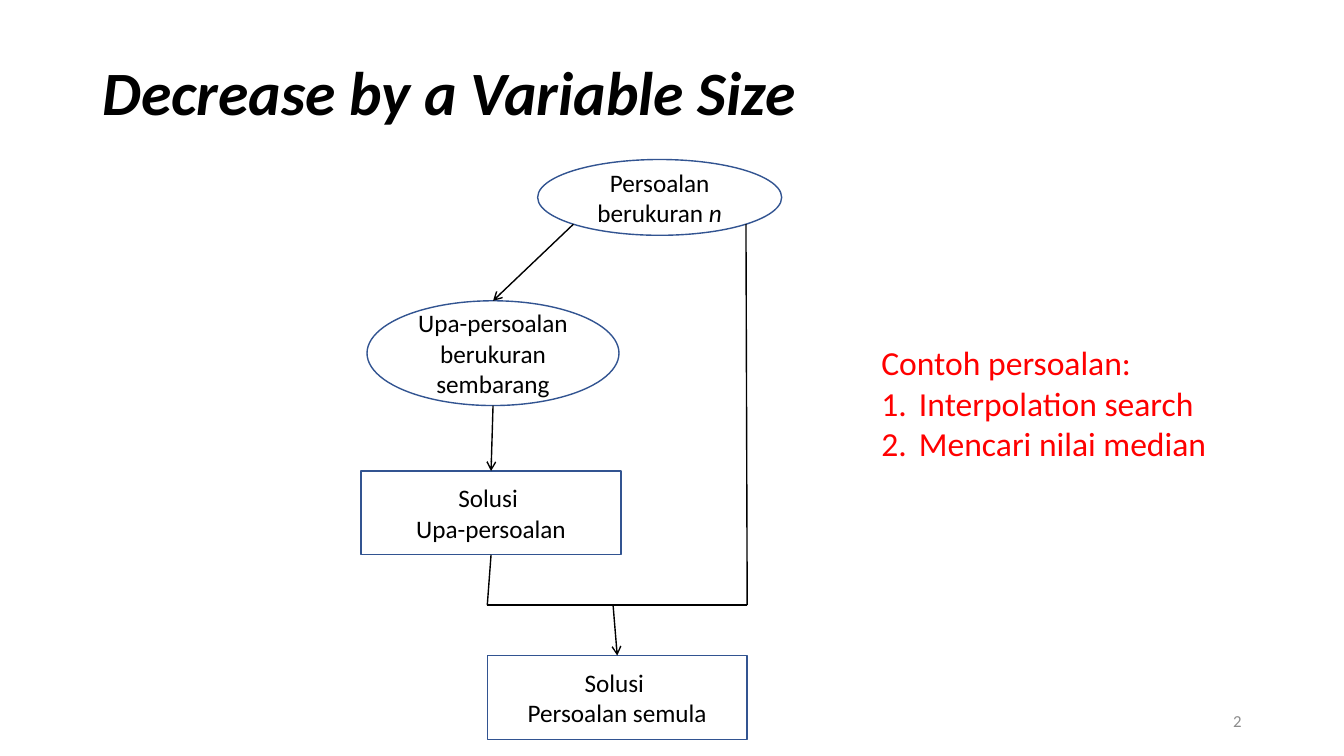
import math

import lxml.etree
import pptx
import pptx.dml.color
import pptx.enum.shapes
import pptx.enum.text
import pptx.oxml.ns
import pptx.util

Cm = pptx.util.Cm
Pt = pptx.util.Pt
RGBColor = pptx.dml.color.RGBColor
ALIGN = pptx.enum.text.PP_ALIGN
ANCHOR = pptx.enum.text.MSO_ANCHOR
SHAPE = pptx.enum.shapes.MSO_SHAPE
qn = pptx.oxml.ns.qn

BLACK = RGBColor(0x00, 0x00, 0x00)
GREY = RGBColor(0x8C, 0x8C, 0x8C)
RED = RGBColor(0xFF, 0x00, 0x00)
NAVY = RGBColor(0x32, 0x54, 0x91)

TITLE_FONT = {"name": "Calibri", "size": Pt(44), "bold": True, "italic": True}
NODE_FONT = {"name": "Calibri", "size": Pt(18)}
EXAMPLE_FONT = {"name": "Calibri", "size": Pt(24)}
NUMBER_FONT = {"name": "Calibri", "size": Pt(12)}


def apply(target, values):
    for name, value in values.items():
        setattr(target, name, value)


def add_run(paragraph, text, font, color):
    run = paragraph.add_run()
    run.text = text
    apply(run.font, font)
    run.font.color.rgb = color


def write(frame, lines, font, color, anchor, layout):
    apply(frame, {"word_wrap": True, "vertical_anchor": anchor})
    for index, line in enumerate(lines):
        paragraph = frame.add_paragraph() if index else frame.paragraphs[0]
        apply(paragraph, layout)
        add_run(paragraph, line, font, color)


def add_text(slide, box, lines, font, color, anchor=ANCHOR.MIDDLE, **layout):
    frame = slide.shapes.add_textbox(*box).text_frame
    write(frame, lines, font, color, anchor, layout)
    return frame


def add_node(slide, kind, box, lines):
    node = slide.shapes.add_shape(kind, *box)
    node.shadow.inherit = False
    node.fill.background()
    node.line.color.rgb = NAVY
    node.line.width = Pt(1)
    write(node.text_frame, lines, NODE_FONT, BLACK, ANCHOR.MIDDLE,
          {"alignment": ALIGN.CENTER})
    return node


def add_link(slide, start, end, arrow=False):
    link = slide.shapes.add_connector(
        pptx.enum.shapes.MSO_CONNECTOR.STRAIGHT, *start, *end)
    link.line.color.rgb = BLACK
    link.line.width = Pt(1)
    if arrow:
        lxml.etree.SubElement(link.line._get_or_add_ln(), qn("a:tailEnd"), type="arrow")
    lxml.etree.SubElement(link._element.spPr, qn("a:effectLst"))
    return link


def top_middle(node):
    return node.left + node.width // 2, node.top


def bottom_middle(node):
    return node.left + node.width // 2, node.top + node.height


def lower_corner(ellipse, side):
    reach = math.sqrt(0.5) / 2
    return (round(ellipse.left + ellipse.width * (0.5 + side * reach)),
            round(ellipse.top + ellipse.height * (0.5 + reach)))


def add_diagram(slide, left, top, width, height):
    solution_size = Cm(6.55), Cm(2.11)
    problem = add_node(slide, SHAPE.OVAL, (left + Cm(4.45), top, Cm(6.15), Cm(1.91)),
                       ["Persoalan berukuran "])
    add_run(problem.text_frame.paragraphs[0], "n", {**NODE_FONT, "italic": True}, BLACK)
    subproblem = add_node(slide, SHAPE.OVAL,
                          (left + Cm(0.15), top + Cm(3.56), Cm(6.35), Cm(2.64)),
                          ["Upa-persoalan berukuran sembarang"])
    subsolution = add_node(slide, SHAPE.RECTANGLE,
                           (left, top + Cm(7.85), *solution_size),
                           ["Solusi ", "Upa-persoalan"])
    solution = add_node(slide, SHAPE.RECTANGLE,
                        (left + width - solution_size[0],
                         top + height - solution_size[1], *solution_size),
                        ["Solusi ", "Persoalan semula"])

    merge_y = top + Cm(11.23)
    merge_left = solution.left, merge_y
    merge_right = solution.left + solution.width, merge_y
    merge_exit = left + Cm(6.35), merge_y

    reduce = add_link(slide, lower_corner(problem, -1), top_middle(subproblem), True)
    reduce.end_connect(subproblem, 0)
    solve = add_link(slide, bottom_middle(subproblem), top_middle(subsolution), True)
    solve.end_connect(subsolution, 0)
    descend = add_link(slide, bottom_middle(subsolution), merge_left)
    descend.begin_connect(subsolution, 2)
    add_link(slide, merge_left, merge_right)
    add_link(slide, merge_right, lower_corner(problem, 1))
    finish = add_link(slide, merge_exit, top_middle(solution), True)
    finish.end_connect(solution, 0)


def add_examples(slide, left, top, width, height):
    frame = add_text(slide, (left, top, width, height),
                     ["Contoh persoalan:", "Interpolation search", "Mencari nilai median"],
                     EXAMPLE_FONT, RED, ANCHOR.TOP)
    indent = Cm(0.95)
    for example in frame.paragraphs[1:]:
        properties = example._p.get_or_add_pPr()
        properties.set("marL", str(indent))
        properties.set("indent", str(-indent))
        lxml.etree.SubElement(properties, qn("a:buFont"), typeface="+mj-lt")
        lxml.etree.SubElement(properties, qn("a:buAutoNum"), type="arabicPeriod")


def main():
    deck = pptx.Presentation()
    apply(deck, {"slide_width": Cm(33.87), "slide_height": Cm(19.05)})
    slide = deck.slides.add_slide(deck.slide_layouts[6])
    add_text(slide, (Cm(2.33), Cm(1.01), Cm(29.21), Cm(2.8)),
             ["Decrease by a Variable Size"], TITLE_FONT, BLACK, line_spacing=0.9)
    add_text(slide, (Cm(23.92), Cm(17.66), Cm(7.62), Cm(1.01)),
             ["2"], NUMBER_FONT, GREY, alignment=ALIGN.RIGHT)
    add_diagram(slide, Cm(9.1), Cm(4.02), Cm(9.73), Cm(14.61))
    add_examples(slide, Cm(21.96), Cm(8.5), Cm(10.24), Cm(3.33))
    deck.save("out.pptx")


if __name__ == "__main__":
    main()
